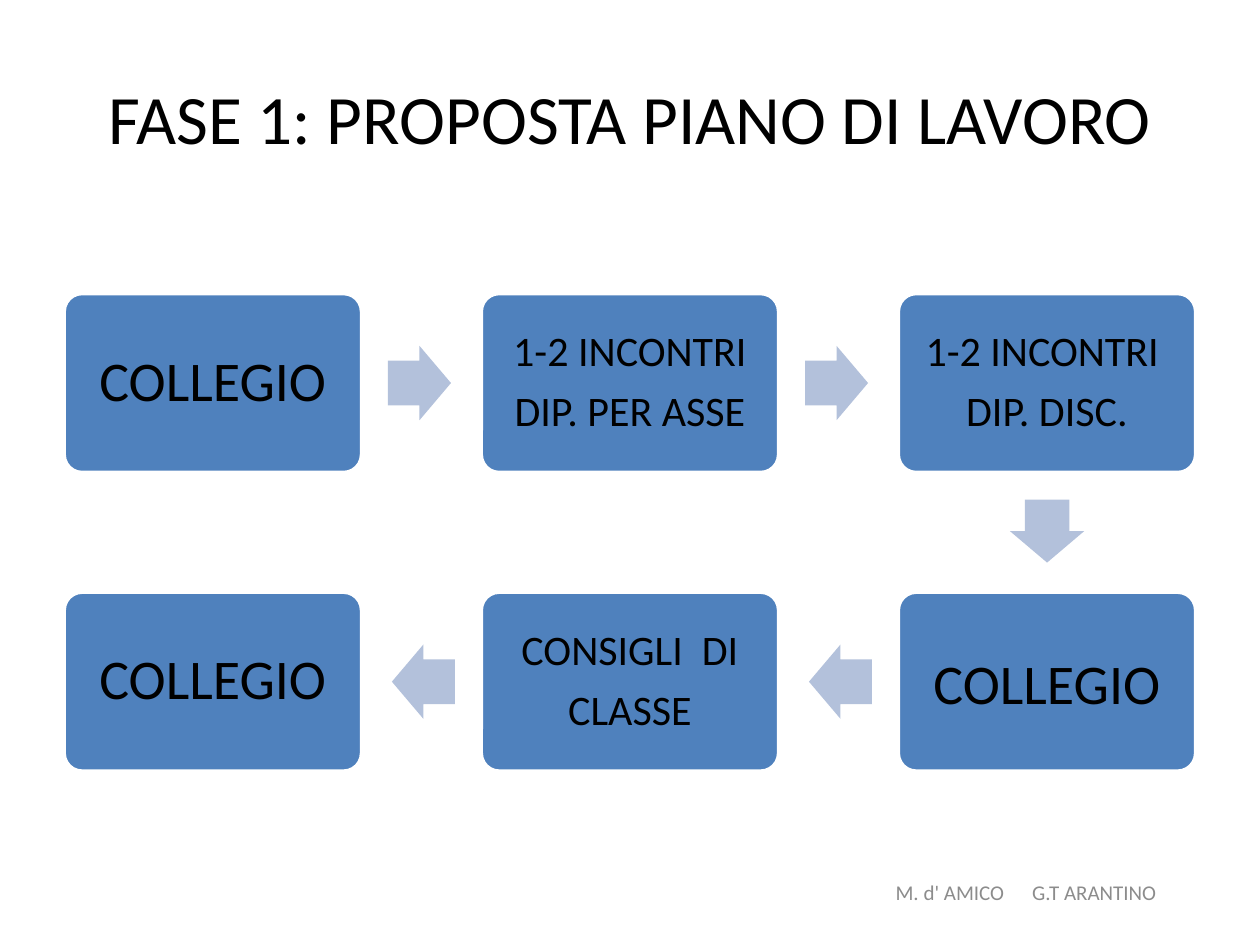
import pptx
import pptx.dml.color
import pptx.enum.shapes
import pptx.enum.text
import pptx.oxml.ns
import pptx.util
import lxml.etree

Pt = pptx.util.Pt
RGB = pptx.dml.color.RGBColor.from_string
SHAPES = pptx.enum.shapes.MSO_SHAPE
ALIGN = pptx.enum.text.PP_ALIGN

THEME = {
    "font": "Calibri",
    "ink": "000000", "muted": "8C8C8C", "edge": "FFFFFF",
    "step": "4F81BD", "arrow": "B3C1DB",
    "title": 39.6, "large": 32, "medium": 24, "footer": 12,
}


def write(holder, text, size, color="ink", align=ALIGN.CENTER, inset=3.6,
          spacing=1.0, after=0):
    frame = holder.text_frame
    frame.word_wrap = True
    frame.vertical_anchor = pptx.enum.text.MSO_ANCHOR.MIDDLE
    frame.margin_left = frame.margin_right = Pt(inset)
    frame.margin_top = frame.margin_bottom = Pt(3.6)
    for index, line in enumerate(text.split("\n")):
        paragraph = frame.add_paragraph() if index else frame.paragraphs[0]
        paragraph.alignment = align
        paragraph.line_spacing = spacing
        paragraph.space_after = Pt(after)
        run = paragraph.add_run()
        run.text = line
        run.font.name = THEME["font"]
        run.font.size = Pt(THEME[size])
        run.font.color.rgb = RGB(THEME[color])


def add_block(kind, left, top, width, height, fill):
    block = slide.shapes.add_shape(kind, Pt(left), Pt(top), Pt(width), Pt(height))
    block.shadow.inherit = False
    block.fill.solid()
    block.fill.fore_color.rgb = RGB(THEME[fill])
    block.line.fill.background()
    return block


deck = pptx.Presentation()
deck.slide_width, deck.slide_height = Pt(720), Pt(540)
slide = deck.slides.add_slide(deck.slide_layouts[6])

title = slide.shapes.add_textbox(Pt(36), Pt(21.6), Pt(648), Pt(90))
write(title, "FASE 1: PROPOSTA PIANO DI LAVORO", "title", inset=7.2)

box_width, box_height = 169.92, 102.24
first_left, column_step = 36.72, 238.32
first_top, row_step = 167.76, 170.64
arrow_width, arrow_height = 36, 42.5

steps = [
    (0, 0, "COLLEGIO", "large", 0.9, 11.2),
    (1, 0, "1-2 INCONTRI\nDIP. PER ASSE", "medium", 0.9, 8.4),
    (2, 0, "1-2 INCONTRI \nDIP. DISC.", "medium", 0.9, 8.4),
    (2, 1, "COLLEGIO", "large", 1.0, 0),
    (1, 1, "CONSIGLI  DI\nCLASSE", "medium", 0.9, 8.4),
    (0, 1, "COLLEGIO", "large", 0.9, 11.2),
]
for column, row, label, size, spacing, after in steps:
    step = add_block(SHAPES.ROUNDED_RECTANGLE, first_left + column * column_step,
                     first_top + row * row_step, box_width, box_height, "step")
    step.adjustments[0] = 0.1
    step.line.color.rgb = RGB(THEME["edge"])
    step.line.width = Pt(2)
    write(step, label, size, spacing=spacing, after=after)

row_middle = first_top + box_height / 2
gap_middle = first_left + box_width + (column_step - box_width) / 2
arrows = [(gap_middle + column * column_step + shift, row_middle + row * row_step, turn)
          for row, shift, turn in ((0, -1.1, 0), (1, 1.1, 180))
          for column in (0, 1)]
arrows.append((first_left + 2 * column_step + box_width / 2, 303.5, 90))
for center_x, center_y, turn in arrows:
    arrow = add_block(SHAPES.RIGHT_ARROW, center_x - arrow_width / 2,
                      center_y - arrow_height / 2, arrow_width, arrow_height, "arrow")
    arrow.adjustments[0], arrow.adjustments[1] = 0.6, 0.5
    arrow.rotation = turn

authors = slide.shapes.add_textbox(Pt(472.32), Pt(495.36), Pt(228.24), Pt(28.8))
write(authors, "M. d' AMICO\tG.T ARANTINO", "footer", color="muted",
      align=ALIGN.LEFT, inset=39.5)
author_format = authors.text_frame.paragraphs[0]._p.get_or_add_pPr()
author_tabs = lxml.etree.SubElement(author_format, pptx.oxml.ns.qn("a:tabLst"))
lxml.etree.SubElement(author_tabs, pptx.oxml.ns.qn("a:tab"), pos=str(Pt(78)), algn="l")

deck.save("out.pptx")
